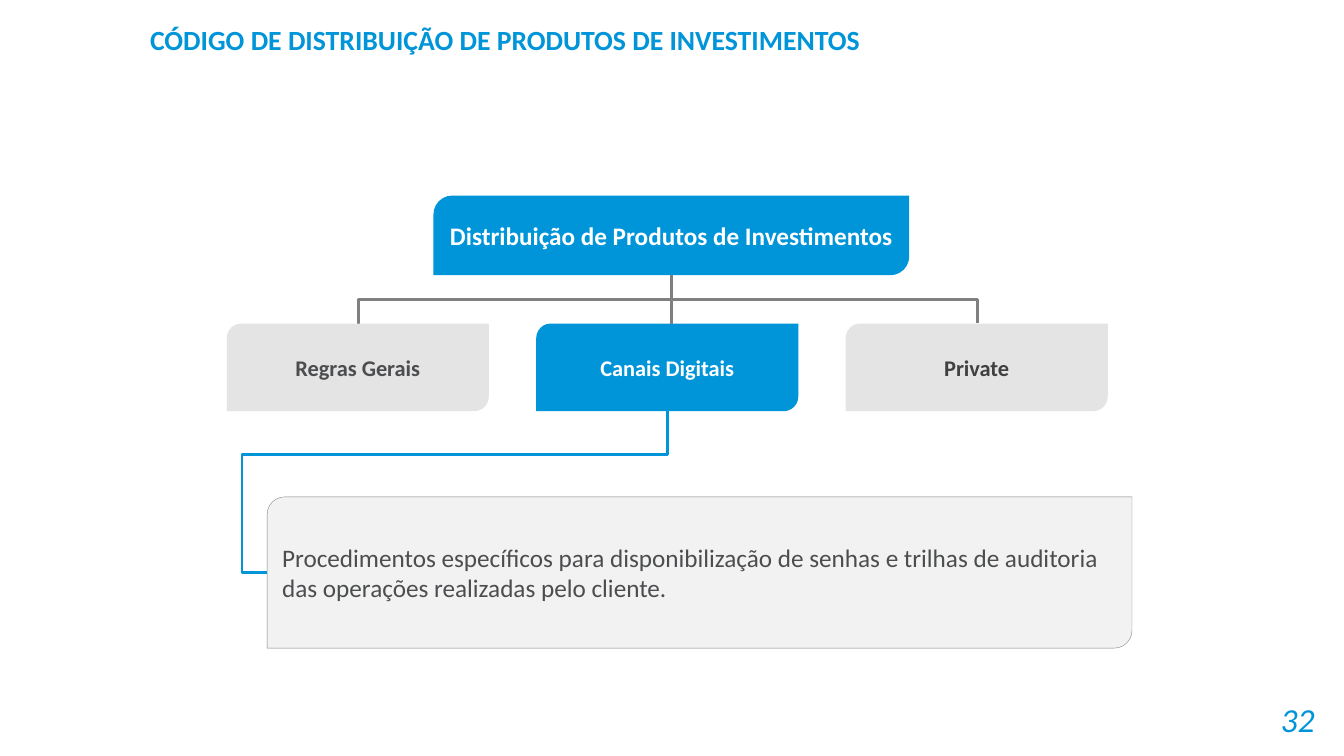
"""Build the slide on the distribution code for investment products."""
import pptx
import pptx.dml.color
import pptx.enum.shapes
import pptx.enum.text
import pptx.oxml
import pptx.oxml.ns
import pptx.util

Pt = pptx.util.Pt
ALIGN = pptx.enum.text.PP_ALIGN
CONNECTOR = pptx.enum.shapes.MSO_CONNECTOR

BLUE, GREY, PALE, MIST, INK = "0095D9", "808080", "E4E4E4", "F2F2F2", "4C4D4F"
TITLE = "CÓDIGO DE DISTRIBUIÇÃO DE PRODUTOS DE INVESTIMENTOS"
ROOT = "Distribuição de Produtos de Investimentos"
BRANCHES = [
    ("Regras Gerais", PALE, INK),
    ("Canais Digitais", BLUE, "FFFFFF"),
    ("Private", PALE, "404040"),
]
DETAIL = ("Procedimentos específicos para disponibilização de senhas e trilhas "
          "de auditoria das operações realizadas pelo cliente.")
PAGE_NUMBER = "32"

BRANCH_LEFT, BRANCH_TOP, BRANCH_WIDTH, BRANCH_HEIGHT = 162, 231.12, 187.2, 62.64
BRANCH_STEP = 221.04


def color(value):
    return pptx.dml.color.RGBColor.from_string(value)


def write(box, text, size, ink, align=ALIGN.LEFT, bold=False, italic=False):
    frame = box.text_frame
    frame.text = text
    frame.word_wrap = True
    frame.vertical_anchor = pptx.enum.text.MSO_ANCHOR.MIDDLE
    para = frame.paragraphs[0]
    para.alignment = align
    font = para.runs[0].font
    font.name, font.size, font.bold, font.italic = "Calibri", Pt(size), bold, italic
    font.color.rgb = color(ink)
    return para


def add_text(page, area, *style, **options):
    write(page.shapes.add_textbox(*map(Pt, area)), *style, **options)


def add_card(page, area, fill, corner=None):
    card = page.shapes.add_shape(
        pptx.enum.shapes.MSO_SHAPE.ROUND_2_DIAG_RECTANGLE, *map(Pt, area))
    card.shadow.inherit = False
    card.fill.solid()
    card.fill.fore_color.rgb = color(fill)
    card.line.fill.background()
    if corner:
        card.adjustments[0] = corner
    return card


def add_line(page, kind, start, end, ink):
    line = page.shapes.add_connector(kind, *map(Pt, start + end))
    line.line.color.rgb = color(ink)
    line.line.width = Pt(2)
    properties = line._element.spPr
    properties.append(pptx.oxml.parse_xml(
        "<a:effectLst %s/>" % pptx.oxml.ns.nsdecls("a")))
    return properties


def add_turned_elbow(page, start, end, ink, preset, bends):
    """Add an elbow turned by 90 degrees; start and end are given before the turn."""
    properties = add_line(page, CONNECTOR.ELBOW, start, end, ink)
    properties.find(pptx.oxml.ns.qn("a:xfrm")).set("rot", "5400000")
    geometry = properties.find(pptx.oxml.ns.qn("a:prstGeom"))
    geometry.set("prst", preset)
    guides = geometry.find(pptx.oxml.ns.qn("a:avLst"))
    for number, bend in enumerate(bends, 1):
        guides.append(pptx.oxml.parse_xml(
            '<a:gd %s name="adj%d" fmla="val %d"/>'
            % (pptx.oxml.ns.nsdecls("a"), number, round(bend * 100000))))


def main():
    deck = pptx.Presentation()
    deck.slide_width, deck.slide_height = Pt(960), Pt(540)
    page = deck.slides.add_slide(deck.slide_layouts[6])

    add_text(page, (704.88, 498.96, 241.2, 28.8), PAGE_NUMBER, 24, BLUE,
             align=ALIGN.RIGHT, italic=True)
    add_text(page, (100.08, 7.2, 527.76, 41.76), TITLE, 19.8, BLUE, bold=True)

    root = add_card(page, (309.6, 139.68, 339.84, 56.88), BLUE, 0.237)
    write(root, ROOT, 18, "FFFFFF", ALIGN.CENTER, bold=True)

    add_turned_elbow(page, (477.5, 452.16), (476.5, 10.08), GREY,
                     "bentConnector3", [18])
    for index, (label, fill, ink) in enumerate(BRANCHES):
        left = BRANCH_LEFT + index * BRANCH_STEP
        card = add_card(page, (left, BRANCH_TOP, BRANCH_WIDTH, BRANCH_HEIGHT), fill)
        write(card, label, 16, ink, ALIGN.CENTER, bold=True)
    add_line(page, CONNECTOR.STRAIGHT, (479.52, 196.56), (479.52, BRANCH_TOP), "7F7F7F")

    detail = add_card(page, (190.8, 354.96, 617.76, 108), MIST, 0.116)
    detail.line.color.rgb = color(GREY)
    detail.line.width = Pt(0.25)
    write(detail, DETAIL, 18, INK).space_after = Pt(12)
    add_turned_elbow(page, (276.12, 208.44), (391.32, 494.28), BLUE,
                     "bentConnector4", [0.266, 1.063])

    deck.save("out.pptx")


if __name__ == "__main__":
    main()
